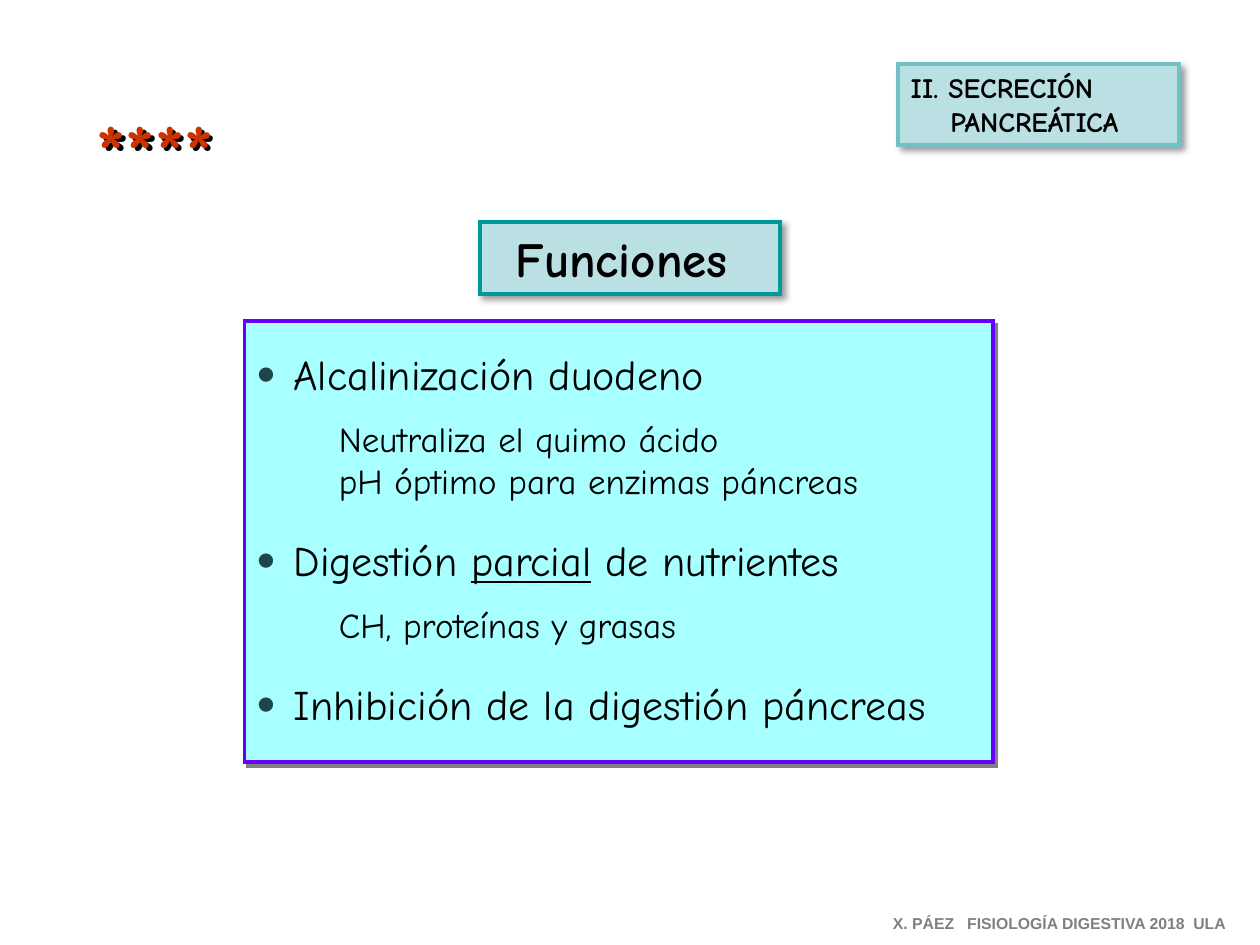
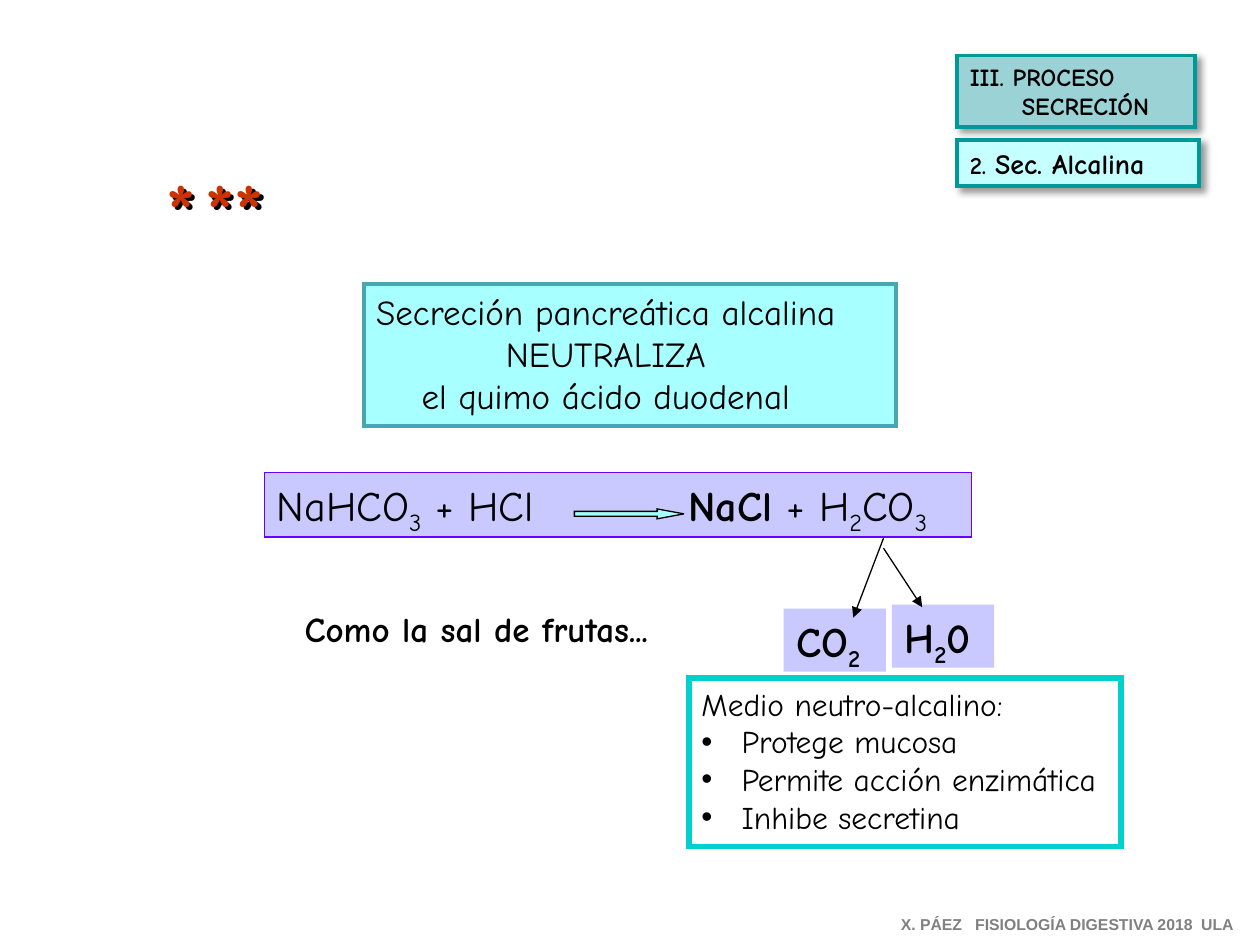
"""Builds two slides on pancreatic secretion."""
from lxml import etree
from pptx import Presentation
from pptx import util as u
from pptx.dml import color
from pptx.enum import shapes, text
from pptx.oxml import ns

COLORS = {
    "ink": "000000", "star": "CC3300", "footer": "808080", "bullet": "1E4649",
    "mist": "BBE0E3", "mist_edge": "72BFC5", "teal": "009999", "teal_pale": "9AD2D6",
    "aqua": "A7FFFF", "aqua_pale": "C5FFFF", "aqua_edge": "49A5AF",
    "violet": "6600FF", "lilac": "C9C9FF", "turquoise": "00D1CC",
}
SOFT = dict(blur=4, dist=3, rgb="000000", alpha=40)
HARD = dict(blur=0, dist=2.8, rgb="808080", alpha=100)
STAR_SHADOW = dict(blur=0, dist=3, rgb="000000", alpha=100)
INSETS = (0.25, 0.13, 0, 0.13)


def add_xml(parent, tag, **attrs):
    return etree.SubElement(parent, ns.qn(tag), {k: str(v) for k, v in attrs.items()})


def add_shadow(effects, blur, dist, rgb, alpha):
    shadow = add_xml(effects, "a:outerShdw", blurRad=int(u.Pt(blur)), dist=int(u.Pt(dist)),
                     dir=2700000, algn="tl", rotWithShape=0)
    add_xml(add_xml(shadow, "a:srgbClr", val=rgb), "a:alpha", val=alpha * 1000)


def gap(points):
    return " ", {"spacing": points}


class Deck:
    """Holds the shared style and the slide being built."""

    font = "Comic Neue"

    def __init__(self):
        self.prs = Presentation()
        self.prs.slide_width, self.prs.slide_height = u.Cm(25.4), u.Cm(19.05)
        self.s = None

    def new_slide(self):
        self.s = self.prs.slides.add_slide(self.prs.slide_layouts[5])

    def rgb(self, name):
        return color.RGBColor.from_string(COLORS[name])

    def style(self, sp, fill=None, line=None, width=2.25, shadow=None):
        if fill:
            sp.fill.solid()
            sp.fill.fore_color.rgb = self.rgb(fill)
        else:
            sp.fill.background()
        if line:
            sp.line.color.rgb = self.rgb(line)
            sp.line.width = u.Pt(width)
            add_xml(sp.line._get_or_add_ln(), "a:miter", lim=800000)
        else:
            sp.line.fill.background()
        sp.shadow.inherit = False
        if shadow:
            add_shadow(sp._element.spPr.find(ns.qn("a:effectLst")), **shadow)

    def frame(self, sp, insets=INSETS):
        tf = sp.text_frame
        tf.word_wrap = True
        tf.auto_size = text.MSO_AUTO_SIZE.NONE
        tf.vertical_anchor = text.MSO_ANCHOR.TOP
        tf.margin_left, tf.margin_top, tf.margin_right, tf.margin_bottom = map(u.Cm, insets)
        return tf

    def para(self, tf, *runs, size=20, bold=False, ink="ink", font=None, align="LEFT",
             before=0, left=0, hang=0, bullet=None, bullet_pct=100):
        first = tf.paragraphs[0]
        p = tf.add_paragraph() if first.runs else first
        p.alignment = getattr(text.PP_ALIGN, align)
        p.space_before = u.Pt(before)
        ppr = p._p.get_or_add_pPr()
        ppr.set("marL", str(u.Cm(left)))
        ppr.set("indent", str(-u.Cm(hang)))
        if bullet:
            add_xml(add_xml(ppr, "a:buClr"), "a:srgbClr", val=COLORS[bullet])
            add_xml(ppr, "a:buSzPct", val=bullet_pct * 1000)
            add_xml(ppr, "a:buFont", typeface="Arial")
            add_xml(ppr, "a:buChar", char="•")
        for run in runs:
            words, look = (run, {}) if isinstance(run, str) else run
            r = p.add_run()
            r.text = words
            r.font.name = font or self.font
            r.font.size = u.Pt(look.get("size", size))
            r.font.bold = look.get("bold", bold)
            r.font.underline = look.get("underline")
            r.font.color.rgb = self.rgb(ink)
            rpr = r._r.get_or_add_rPr()
            if look.get("sub"):
                rpr.set("baseline", "-25000")
            if look.get("spacing"):
                rpr.set("spc", str(int(look["spacing"] * 100)))

    def title(self, box, lines, size, bold, fill, line, insets, shadow=None):
        sp = self.s.shapes.title
        sp.left, sp.top, sp.width, sp.height = map(u.Cm, box)
        self.style(sp, fill, line, shadow=shadow)
        tf = self.frame(sp, insets)
        for words in lines:
            self.para(tf, words, size=size, bold=bold, align="CENTER")

    def box(self, box, fill=None, line=None, width=2.25, shadow=None, insets=INSETS,
            kind=shapes.MSO_SHAPE.RECTANGLE):
        sp = self.s.shapes.add_shape(kind, *map(u.Cm, box))
        self.style(sp, fill, line, width, shadow)
        return sp, self.frame(sp, insets)

    def label(self, box, *runs, shadow=None, **look):
        sp = self.s.shapes.add_textbox(*map(u.Cm, box))
        self.style(sp, shadow=shadow)
        self.para(self.frame(sp), *runs, **look)

    def stars(self, box, words):
        self.label(box, words, size=44, bold=True, ink="star", shadow=STAR_SHADOW)

    def tag(self, box, first, second, size, left, fill, line):
        tf = self.box(box, fill, line, shadow=SOFT)[1]
        self.para(tf, first, size=size, bold=True)
        self.para(tf, second, size=size, bold=True, left=left)

    def footer(self, left, top):
        self.label((left, top, 7.36, 0.64), "X. PÁEZ", gap(5), "FISIOLOGÍA DIGESTIVA 2018",
                   gap(2.5), "ULA", size=9, bold=True, ink="footer", font="Arial")

    def arrow(self, *ends):
        line = self.s.shapes.add_connector(shapes.MSO_CONNECTOR.STRAIGHT, *map(u.Cm, ends))
        line.line.color.rgb = self.rgb("ink")
        line.line.width = u.Pt(0.75)
        add_xml(line.line._get_or_add_ln(), "a:tailEnd", type="triangle")
        add_xml(line._element.spPr, "a:effectLst")


def functions_slide(deck):
    deck.new_slide()
    deck.title((9.68, 4.47, 6.05, 1.45), ["Funciones"], 28, True, "mist", "teal",
               (0.25, 0.13, 0.6, 0.13), SOFT)
    tf = deck.box((4.93, 6.48, 15.09, 8.89), "aqua", "violet", shadow=HARD,
                  insets=(0.25, 0.55, 0, 0.13))[1]
    functions = [
        (["Alcalinización duodeno"],
         ["Neutraliza el quimo ácido", "pH óptimo para enzimas páncreas"]),
        (["Digestión ", ("parcial", {"underline": True}), " de nutrientes"],
         ["CH, proteínas y grasas"]),
        (["Inhibición de la digestión páncreas"], []),
    ]
    for i, (heading, details) in enumerate(functions):
        deck.para(tf, *heading, size=24, before=19 if i else 0, left=0.74, hang=0.74,
                  bullet="bullet", bullet_pct=125)
        for j, detail in enumerate(details):
            deck.para(tf, detail, before=0 if j else 10.5, left=1.65)
    deck.stars((1.7, 1.93, 3.84, 2.13), "****")
    deck.footer(17.75, 18.29)
    deck.tag((18.11, 1.3, 5.66, 1.63), "II. SECRECIÓN", "PANCREÁTICA", 16, 0.8,
             "mist", "mist_edge")


def neutralization_slide(deck):
    sub = {"sub": True}
    deck.new_slide()
    deck.title((7.34, 5.72, 10.72, 2.87),
               ["Secreción pancreática alcalina", "NEUTRALIZA", "el quimo ácido duodenal"],
               20, False, "aqua", "aqua_edge", (0, 0.13, 0.97, 0.13))
    tf = deck.box((5.33, 9.53, 14.25, 1.3), "lilac", "violet", 0.75)[1]
    deck.para(tf, "NaHCO", ("3", sub), " + HCl", gap(80.5), ("NaCl", {"bold": True}),
              " + H", ("2", sub), "CO", ("3", sub), size=24)
    products = [(15.8, 12.27, ["CO", ("2", sub)]), (17.98, 12.19, ["H", ("2", sub), "0"])]
    for left, top, formula in products:
        tf = deck.box((left, top, 2.06, 1.27), "lilac")[1]
        deck.para(tf, *formula, size=24, bold=True)
    reaction = deck.box((11.58, 10.26, 2.21, 0.2), "aqua", "ink", 0.75,
                        kind=shapes.MSO_SHAPE.RIGHT_ARROW)[0]
    reaction.adjustments[0], reaction.adjustments[1] = 0.5, 2.71
    deck.arrow(17.81, 10.85, 17.2, 12.45)
    deck.arrow(17.81, 11.05, 18.59, 12.24)
    tf = deck.box((13.89, 13.67, 8.71, 3.4), line="turquoise", width=3)[1]
    deck.para(tf, "Medio neutro-alcalino:", size=18)
    for effect in ("Protege mucosa", "Permite acción enzimática", "Inhibe secretina"):
        deck.para(tf, effect, size=18, left=0.81, hang=0.81, bullet="ink")
    deck.stars((3.1, 3.12, 1.32, 2.11), "*")
    deck.label((5.89, 12.12, 8.81, 1.09), "Como la sal de frutas...", bold=True)
    deck.stars((3.89, 3.12, 2.16, 2.11), "**")
    deck.footer(17.91, 18.31)
    deck.tag((19.3, 1.12, 4.8, 1.45), "III. PROCESO", "SECRECIÓN", 14, 1.05,
             "teal_pale", "teal")
    tf = deck.box((19.3, 2.82, 4.88, 0.94), "aqua_pale", "teal", shadow=SOFT)[1]
    deck.para(tf, ("2. ", {"size": 14}), "Sec. Alcalina", size=16, bold=True)


def main():
    deck = Deck()
    functions_slide(deck)
    neutralization_slide(deck)
    deck.prs.save("out.pptx")


if __name__ == "__main__":
    main()
